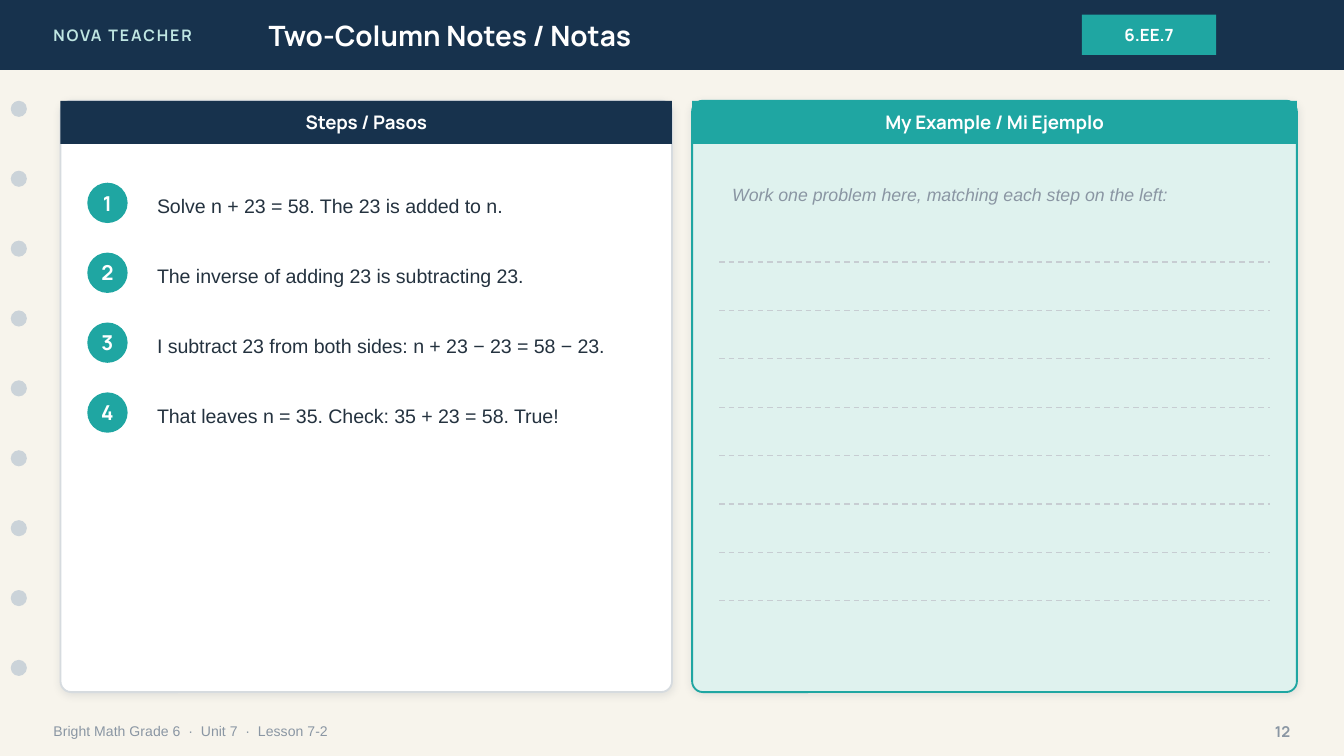
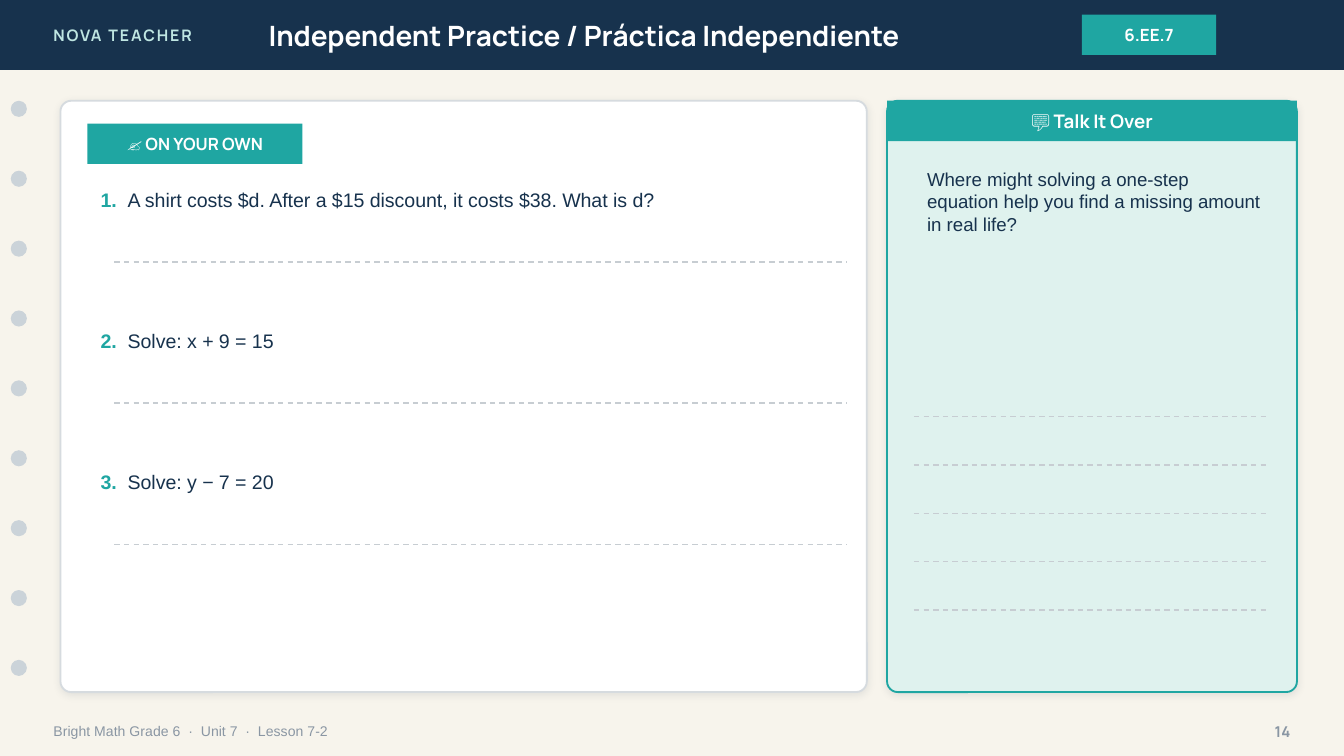
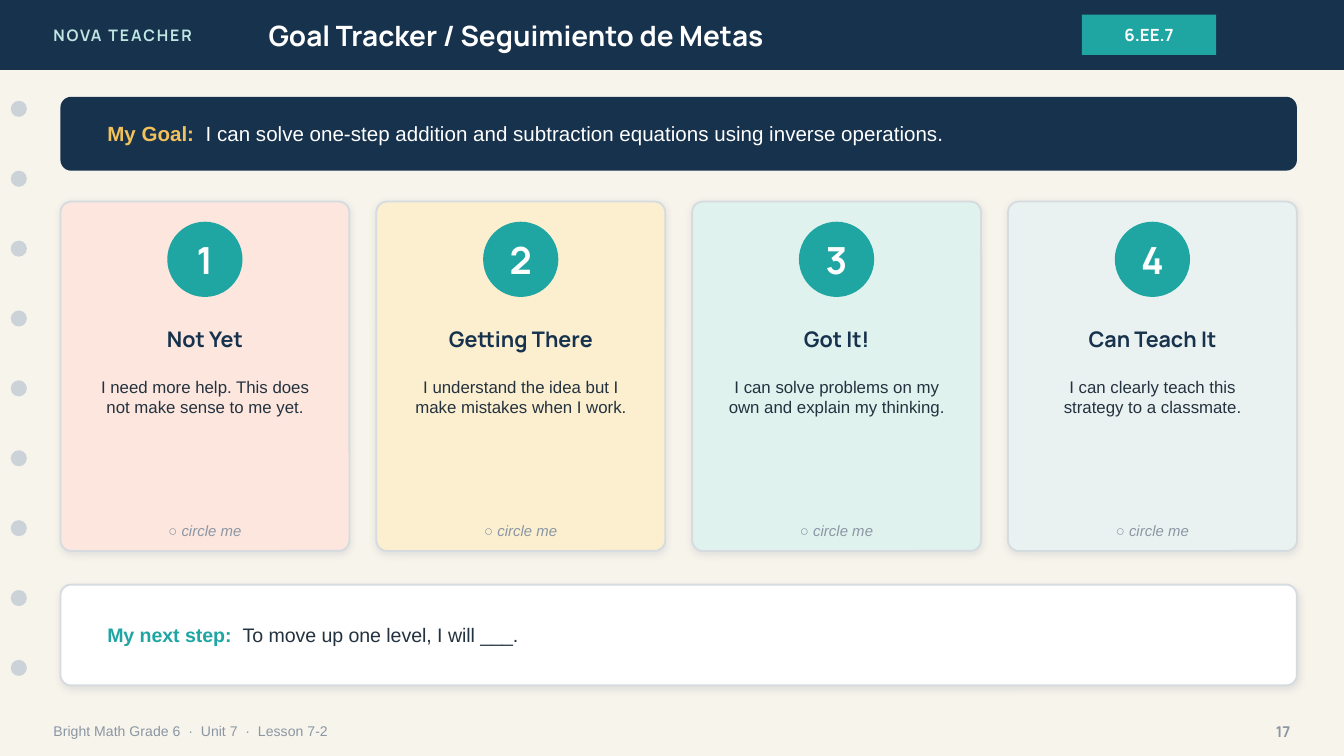
from dataclasses import dataclass, replace
from typing import NamedTuple, Optional

from lxml import etree
from pptx import Presentation
from pptx.dml.color import RGBColor
from pptx.enum.dml import MSO_LINE
from pptx.enum.shapes import MSO_CONNECTOR, MSO_SHAPE as Shape
from pptx.enum.text import MSO_ANCHOR as Anchor, PP_ALIGN as Align
from pptx.oxml.ns import qn
from pptx.util import Inches, Pt


# Theme: colours, fonts and type sizes
@dataclass(frozen=True)
class Theme:
    paper: str = "F7F4EC"
    navy: str = "17324D"
    teal: str = "1FA6A2"
    pale_teal: str = "BFE6E2"
    mint: str = "DFF2EE"
    peach: str = "FCE6DE"
    cream: str = "FBEFD0"
    mist: str = "EAF2F1"
    gold: str = "F2C15B"
    white: str = "FFFFFF"
    ink: str = "24323F"
    muted: str = "8A96A3"
    hole: str = "CBD3D9"
    edge: str = "D6DBDF"
    rule: str = "C7CDD2"
    shadow: str = "1C2E42"
    heading: str = "Manrope"
    body: str = "Arial"
    title_size: float = 15
    level_size: float = 20
    level_name_size: float = 11.5
    large: float = 11
    text: float = 10.5
    medium: float = 10
    hint: float = 9.5
    small: float = 9
    brand: float = 8.5
    tiny: float = 8
    footer: float = 7.5


T = Theme()


class Box(NamedTuple):
    x: float
    y: float
    w: float
    h: float


@dataclass(frozen=True)
class Style:
    size: float
    color: str
    font: str = T.body
    bold: bool = False
    italic: bool = False
    spacing: int = 0  # hundredths of a point


class Span(NamedTuple):
    text: str
    style: Style


class Level(NamedTuple):
    name: str
    meaning: str
    fill: str


def heading(size: float, color: str = T.white) -> Style:
    return Style(size, color, T.heading, bold=True)


BODY = Style(T.text, T.ink)
LABEL = Style(T.text, T.teal, bold=True)
QUESTION = replace(BODY, color=T.navy)

# Shared layout
LEFT, RIGHT, TOP = 0.45, 9.65, 0.75
PANEL_H = 4.4
RADIUS = 0.08
STEP_GAP = 0.52
RULE_GAP = 0.36
HEADER_H = 0.52


# Drawing helpers
def set_font(font, style: Style) -> None:
    font.name = style.font
    font.size = Pt(style.size)
    font.bold = style.bold
    font.italic = style.italic
    font.color.rgb = RGBColor.from_string(style.color)


def write(tf, spans: list[Span], align=Align.LEFT, anchor=Anchor.MIDDLE) -> None:
    tf.word_wrap = True
    tf.vertical_anchor = anchor
    p = tf.paragraphs[0]
    p.alignment = align
    if len(spans) == 1:
        set_font(p.font, spans[0].style)
    for span in spans:
        r = p.add_run()
        r.text = span.text
        if len(spans) > 1:
            set_font(r.font, span.style)
        if span.style.spacing:
            r._r.get_or_add_rPr().set("spc", str(span.style.spacing))


def add_text(s, box: Box, spans: list[Span], align=Align.LEFT, anchor=Anchor.MIDDLE) -> None:
    tb = s.shapes.add_textbox(*map(Inches, box))
    write(tb.text_frame, spans, align, anchor)


def add_block(s, kind, box: Box, fill: str, label: Optional[Span] = None):
    sp = s.shapes.add_shape(kind, *map(Inches, box))
    sp.shadow.inherit = False
    sp.fill.solid()
    sp.fill.fore_color.rgb = RGBColor.from_string(fill)
    sp.line.fill.background()
    if label:
        write(sp.text_frame, [label], Align.CENTER)
    return sp


def add_rounded(s, box: Box, fill: str):
    sp = add_block(s, Shape.ROUNDED_RECTANGLE, box, fill)
    sp.adjustments[0] = RADIUS / min(box.w, box.h)
    return sp


def add_card(s, box: Box, fill: str = T.white, edge: str = T.edge) -> None:
    """Rounded, outlined panel with a soft shadow."""
    sp = add_rounded(s, box, fill)
    sp.line.color.rgb = RGBColor.from_string(edge)
    sp.line.width = Pt(1)
    effects = sp._element.spPr.find(qn("a:effectLst"))
    shadow = etree.SubElement(effects, qn("a:outerShdw"), blurRad=str(Pt(4)),
                              dist=str(Pt(1)), dir="5400000", algn="bl", rotWithShape="0")
    color = etree.SubElement(shadow, qn("a:srgbClr"), val=T.shadow)
    etree.SubElement(color, qn("a:alpha"), val="10000")


def add_titled_card(s, box: Box, title: str, band_h: float, fill: str, edge: str, band: str) -> None:
    add_card(s, box, fill, edge)
    add_block(s, Shape.RECTANGLE, box._replace(h=band_h), band, Span(title, heading(T.medium)))


def add_number(s, box: Box, number: int, size: float) -> None:
    add_block(s, Shape.OVAL, box, T.teal)
    add_text(s, box, [Span(str(number), heading(size))], Align.CENTER)


def add_rules(s, x1: float, x2: float, y: float, count: int = 1) -> None:
    """Dashed writing lines, evenly spaced downwards."""
    for i in range(count):
        level = Inches(y + i * RULE_GAP)
        line = s.shapes.add_connector(MSO_CONNECTOR.STRAIGHT, Inches(x1), level, Inches(x2), level)
        line.line.color.rgb = RGBColor.from_string(T.rule)
        line.line.width = Pt(0.75)
        line.line.dash_style = MSO_LINE.DASH
        etree.SubElement(line._element.spPr, qn("a:effectLst"))


def add_page(prs, title: str, number: int):
    """Slide with header band, binder holes and footer."""
    s = prs.slides.add_slide(prs.slide_layouts[6])
    s.background.fill.solid()
    s.background.fill.fore_color.rgb = RGBColor.from_string(T.paper)

    add_block(s, Shape.RECTANGLE, Box(0, 0, 10, HEADER_H), T.navy)
    brand = replace(heading(T.brand, T.pale_teal), spacing=100)
    add_text(s, Box(0.3, 0, 2.4, HEADER_H), [Span("NOVA TEACHER", brand)])
    add_text(s, Box(1.9, 0, 5.6, HEADER_H), [Span(title, heading(T.title_size))])
    add_block(s, Shape.RECTANGLE, Box(8.05, 0.11, 1, 0.3), T.teal, Span("6.EE.7", heading(T.small)))

    for i in range(9):
        add_block(s, Shape.OVAL, Box(0.08, TOP + i * STEP_GAP, 0.12, 0.12), T.hole)

    add_text(s, Box(0.3, 5.3, 7, 0.28),
             [Span("Bright Math Grade 6  ·  Unit 7  ·  Lesson 7-2", Style(T.footer, T.muted))])
    add_text(s, Box(9.2, 5.3, 0.5, 0.28), [Span(str(number), heading(T.tiny, T.muted))], Align.RIGHT)
    return s


# Slides
def build_notes(prs) -> None:
    s = add_page(prs, "Two-Column Notes / Notas", 12)

    # Worked steps
    add_titled_card(s, Box(LEFT, TOP, 4.55, PANEL_H), "Steps / Pasos", 0.32, T.white, T.edge, T.navy)
    steps = [
        "Solve n + 23 = 58. The 23 is added to n.",
        "The inverse of adding 23 is subtracting 23.",
        "I subtract 23 from both sides: n + 23 − 23 = 58 − 23.",
        "That leaves n = 35. Check: 35 + 23 = 58. True!",
    ]
    for i, step in enumerate(steps):
        y = 1.36 + i * STEP_GAP
        add_number(s, Box(0.65, y, 0.3, 0.3), i + 1, T.large)
        add_text(s, Box(1.07, y - 0.06, 3.78, 0.46), [Span(step, BODY)])

    # Space for the student's example
    add_titled_card(s, Box(5.15, TOP, 4.5, PANEL_H), "My Example / Mi Ejemplo", 0.32,
                    T.mint, T.teal, T.teal)
    add_text(s, Box(5.35, 1.25, 4.1, 0.4),
             [Span("Work one problem here, matching each step on the left:",
                   Style(T.hint, T.muted, italic=True))])
    add_rules(s, 5.35, 9.45, 1.95, 8)


def build_practice(prs) -> None:
    s = add_page(prs, "Independent Practice / Práctica Independiente", 14)

    # Problems
    add_card(s, Box(LEFT, TOP, 6, PANEL_H))
    add_block(s, Shape.RECTANGLE, Box(0.65, 0.92, 1.6, 0.3), T.teal,
              Span("✍️ ON YOUR OWN", heading(T.small)))
    problems = [
        "A shirt costs $d. After a $15 discount, it costs $38. What is d?",
        "Solve: x + 9 = 15",
        "Solve: y − 7 = 20",
    ]
    for i, problem in enumerate(problems):
        y = 1.35 + i * 1.05
        add_text(s, Box(0.65, y, 5.65, 0.5),
                 [Span(f"{i + 1}.  ", LABEL), Span(problem, QUESTION)], anchor=Anchor.TOP)
        add_rules(s, 0.85, 6.3, y + 0.6)

    # Discussion
    add_titled_card(s, Box(6.6, TOP, 3.05, PANEL_H), "💬 Talk It Over", 0.3, T.mint, T.teal, T.teal)
    question = "Where might solving a one-step equation help you find a missing amount in real life?"
    add_text(s, Box(6.8, 1.2, 2.7, 1.7), [Span(question, replace(QUESTION, size=T.medium))],
             anchor=Anchor.TOP)
    add_rules(s, 6.8, 9.45, 3.1, 5)


def build_goals(prs) -> None:
    s = add_page(prs, "Goal Tracker / Seguimiento de Metas", 17)
    width = RIGHT - LEFT

    # Goal
    add_rounded(s, Box(LEFT, 0.72, width, 0.55), T.navy)
    add_text(s, Box(0.7, 0.72, 8.7, 0.55), [
        Span("My Goal:  ", Style(T.large, T.gold, bold=True)),
        Span("I can solve one-step addition and subtraction equations using inverse operations.",
             Style(T.large, T.white)),
    ])

    # Self-rating levels
    levels = [
        Level("Not Yet", "I need more help. This does not make sense to me yet.", T.peach),
        Level("Getting There", "I understand the idea but I make mistakes when I work.", T.cream),
        Level("Got It!", "I can solve problems on my own and explain my thinking.", T.mint),
        Level("Can Teach It", "I can clearly teach this strategy to a classmate.", T.mist),
    ]
    gap, circle = 0.2, 0.56
    card_w = (width - gap * (len(levels) - 1)) / len(levels)
    for i, level in enumerate(levels):
        x = LEFT + i * (card_w + gap)
        add_card(s, Box(x, 1.5, card_w, 2.6), level.fill)
        add_number(s, Box(x + (card_w - circle) / 2, 1.65, circle, circle), i + 1, T.level_size)
        add_text(s, Box(x + 0.05, 2.35, card_w - 0.1, 0.35),
                 [Span(level.name, heading(T.level_name_size, T.navy))], Align.CENTER)
        add_text(s, Box(x + 0.12, 2.75, card_w - 0.24, 1.15),
                 [Span(level.meaning, replace(BODY, size=T.small))], Align.CENTER, Anchor.TOP)
        add_text(s, Box(x + 0.05, 3.85, card_w - 0.1, 0.2),
                 [Span("○ circle me", Style(T.tiny, T.muted, italic=True))], Align.CENTER)

    # Next step
    add_card(s, Box(LEFT, 4.35, width, 0.75))
    add_text(s, Box(0.7, 4.35, 8.7, 0.75),
             [Span("My next step:  ", LABEL), Span("To move up one level, I will ___.", BODY)])


def main() -> None:
    prs = Presentation()
    prs.slide_width = Inches(10)
    prs.slide_height = Inches(10) * 9 // 16
    build_notes(prs)
    build_practice(prs)
    build_goals(prs)
    prs.save("out.pptx")


if __name__ == "__main__":
    main()
